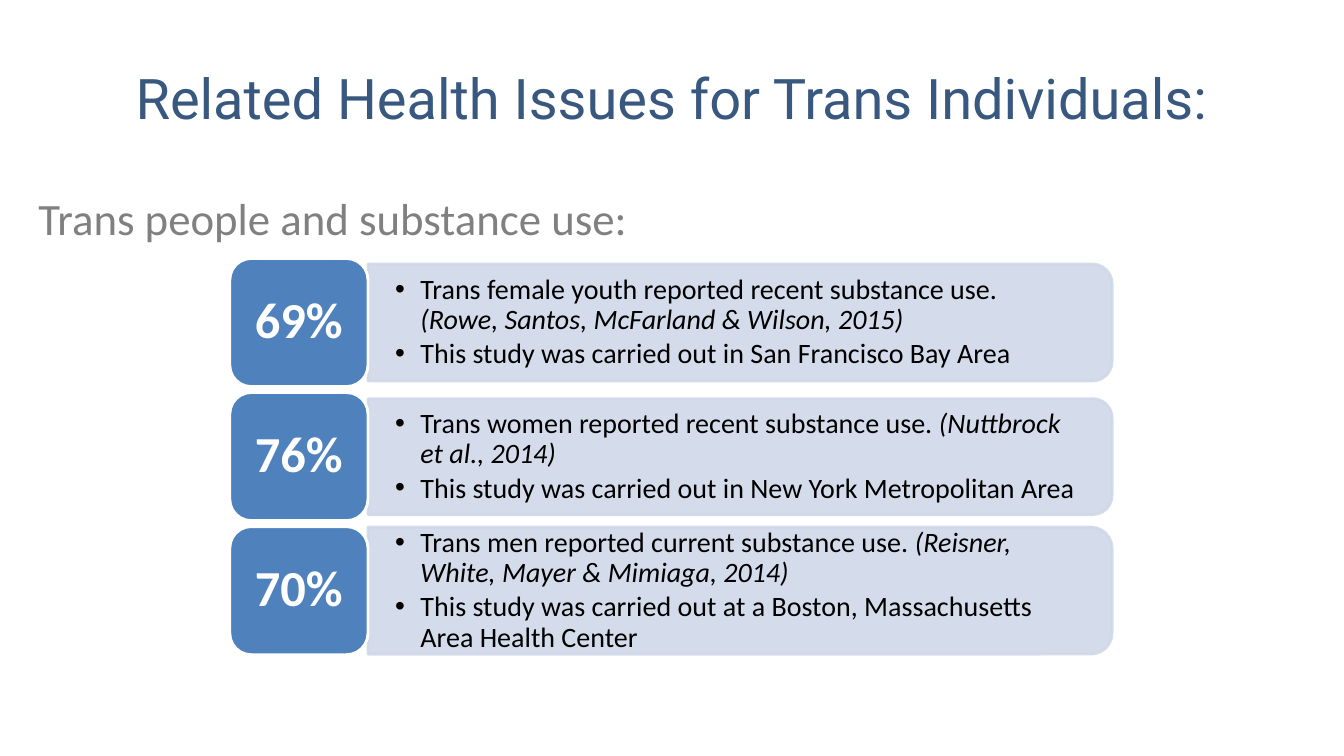
from lxml.etree import SubElement
from pptx import Presentation
from pptx.dml.color import RGBColor
from pptx.enum.shapes import MSO_SHAPE
from pptx.enum.text import MSO_ANCHOR, MSO_AUTO_SIZE, PP_ALIGN
from pptx.oxml.ns import qn
from pptx.util import Emu, Pt

# Content
TITLE = "Related Health Issues for Trans Individuals:"
SUBTITLE = "Trans people and substance use:"
FINDINGS = [
    ("69%", "Trans female youth reported recent substance use. ",
     "(Rowe, Santos, McFarland & Wilson, 2015)",
     "This study was carried out in San Francisco Bay Area", 116),
    ("76%", "Trans women reported recent substance use. ",
     "(Nuttbrock et al., 2014)",
     "This study was carried out in New York Metropolitan Area", 115),
    ("70%", "Trans men reported current substance use. ",
     "(Reisner, White, Mayer & Mimiaga, 2014)",
     "This study was carried out at a Boston, Massachusetts Area Health Center", 126),
]
COLORS = {"title": "39587F", "subtitle": "808080", "panel": "D0D8E8",
          "tile": "4F81BD", "white": "FFFFFF", "black": "000000"}

# Layout, in px (100 px to the inch)
PX = 9144
TILE_LEFT, TILE_WIDTH, TILE_HEIGHT = 228, 137, 127
PANEL_LEFT, PANEL_WIDTH = TILE_LEFT + TILE_WIDTH, 738
TEXT_WIDTH = 732
FIRST_CENTER, ROW_PITCH = 320, 133
BULLET_INDENT = 25


def px(*lengths):
    return [Emu(round(length * PX)) for length in lengths]


def color(name):
    return RGBColor.from_string(COLORS[name])


def format_font(font, size, color_name, face="Calibri"):
    font.name, font.size = face, Pt(size)
    font.color.rgb = color(color_name)


def set_frame(text_frame, anchor, margin_x, margin_y):
    text_frame.word_wrap = True
    text_frame.auto_size = MSO_AUTO_SIZE.NONE
    text_frame.vertical_anchor = anchor
    text_frame.margin_left = text_frame.margin_right = margin_x * PX
    text_frame.margin_top = text_frame.margin_bottom = margin_y * PX


def set_bullet(paragraph, indent, character=None):
    properties = paragraph._p.get_or_add_pPr()
    properties.set("marL", str(indent * PX))
    properties.set("indent", str(-indent * PX))
    if character:
        SubElement(properties, qn("a:buFont"), typeface="Arial")
        SubElement(properties, qn("a:buChar"), char=character)
    else:
        SubElement(properties, qn("a:buNone"))


def fill_placeholder(shape, box, text, size, color_name, face, anchor):
    shape.left, shape.top, shape.width, shape.height = px(*box)
    shape.text_frame.text = text
    set_frame(shape.text_frame, anchor, 10, 5)
    paragraph = shape.text_frame.paragraphs[0]
    format_font(paragraph.runs[0].font, size, color_name, face)
    return paragraph


def add_block(slide, kind, box, fill, line):
    shape = slide.shapes.add_shape(kind, *px(*box))
    shape.shadow.inherit = False
    shape.fill.solid()
    shape.fill.fore_color.rgb = color(fill)
    shape.line.color.rgb = color(line)
    shape.line.width = Pt(2)
    return shape


def add_panel(slide, center, height):
    # A quarter turn puts the two rounded corners on the right
    box = (PANEL_LEFT + (PANEL_WIDTH - height) / 2, center - PANEL_WIDTH / 2,
           height, PANEL_WIDTH)
    panel = add_block(slide, MSO_SHAPE.ROUND_2_SAME_RECTANGLE, box, "panel", "panel")
    panel.rotation = 90
    for solid in panel._element.spPr.iter(qn("a:srgbClr")):
        SubElement(solid, qn("a:alpha"), val="90000")


def add_finding_text(slide, center, height, finding, citation, place):
    box = (PANEL_LEFT, center - height / 2, TEXT_WIDTH, height)
    text_frame = slide.shapes.add_textbox(*px(*box)).text_frame
    set_frame(text_frame, MSO_ANCHOR.MIDDLE, 27, 14)
    text_frame.text = f"{finding}\n{place}"
    text_frame.paragraphs[0].add_run().text = citation
    text_frame.paragraphs[0].runs[1].font.italic = True
    for paragraph in text_frame.paragraphs:
        set_bullet(paragraph, BULLET_INDENT, "•")
        paragraph.line_spacing = 0.9
        paragraph.space_after = Pt(3)
        for run in paragraph.runs:
            format_font(run.font, 20, "black")


def add_tile(slide, center, percent):
    box = (TILE_LEFT, center - TILE_HEIGHT / 2, TILE_WIDTH, TILE_HEIGHT)
    tile = add_block(slide, MSO_SHAPE.ROUNDED_RECTANGLE, box, "tile", "white")
    set_frame(tile.text_frame, MSO_ANCHOR.MIDDLE, 15, 7)
    tile.text_frame.text = percent
    paragraph = tile.text_frame.paragraphs[0]
    paragraph.alignment = PP_ALIGN.CENTER
    paragraph.line_spacing = 0.9
    format_font(paragraph.runs[0].font, 36, "white")
    paragraph.runs[0].font.bold = True


def main():
    presentation = Presentation()
    presentation.slide_width, presentation.slide_height = px(1333, 750)
    slide = presentation.slides.add_slide(presentation.slide_layouts[1])

    # Title and subtitle
    title = fill_placeholder(slide.shapes.title, (28, 25, 1276, 142), TITLE,
                             40, "title", "Roboto", MSO_ANCHOR.MIDDLE)
    title.alignment = PP_ALIGN.CENTER
    subtitle = fill_placeholder(slide.placeholders[1], (28, 184, 1276, 451), SUBTITLE,
                                32, "subtitle", "Calibri", MSO_ANCHOR.TOP)
    set_bullet(subtitle, 0)
    subtitle.space_before = Pt(0)

    # One row per finding: panel, text, percentage tile
    for row, (percent, finding, citation, place, height) in enumerate(FINDINGS):
        center = FIRST_CENTER + row * ROW_PITCH
        add_panel(slide, center, height)
        add_finding_text(slide, center, height - 12, finding, citation, place)
        add_tile(slide, center, percent)

    presentation.save("out.pptx")


if __name__ == "__main__":
    main()
